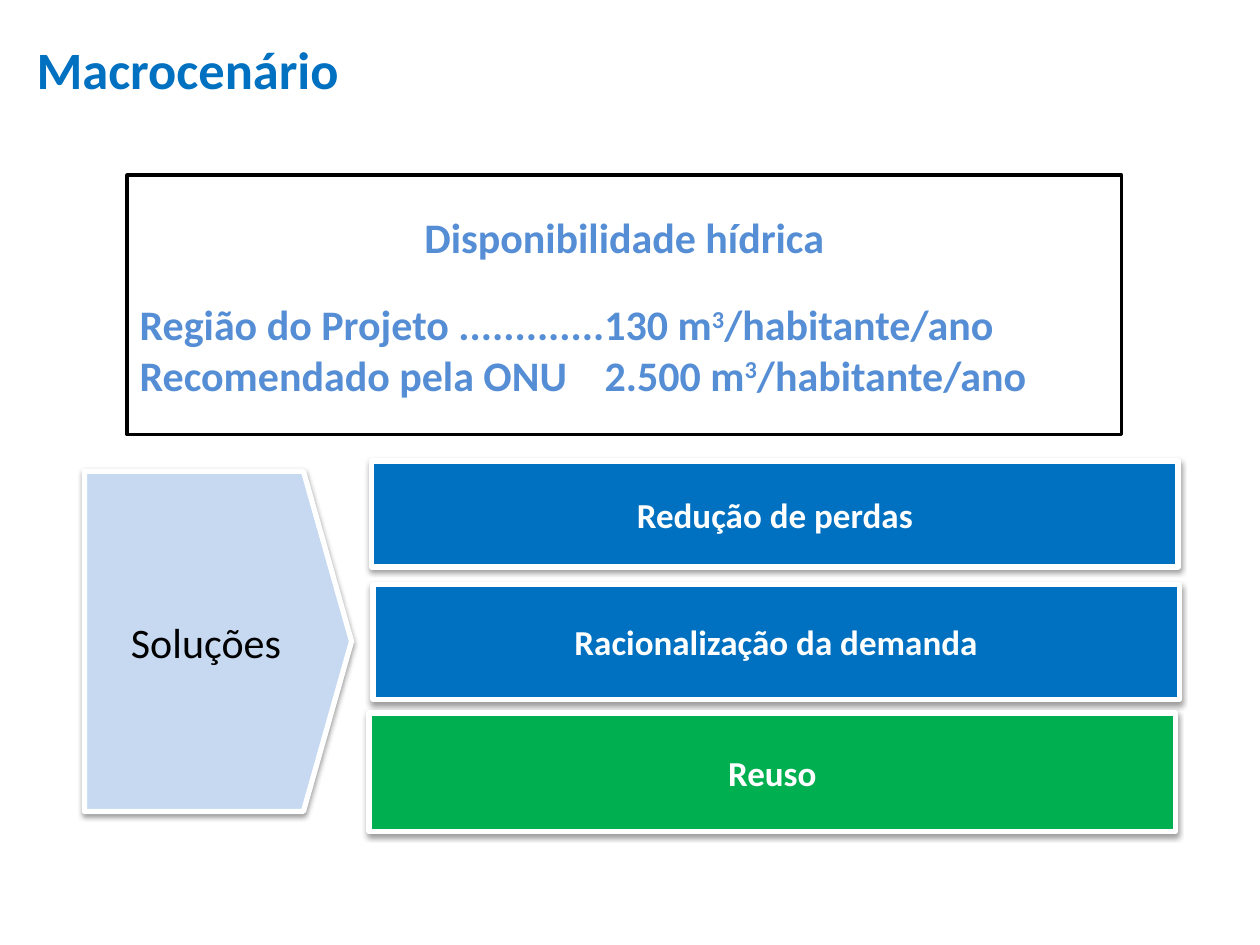
import pptx
import pptx.util
from lxml import etree
from pptx.dml.color import RGBColor
from pptx.enum.shapes import MSO_SHAPE
from pptx.enum.text import MSO_ANCHOR, PP_ALIGN
from pptx.oxml.ns import qn
from pptx.util import Inches, Pt

BLUE = RGBColor(0x00, 0x70, 0xC0)
SOFT_BLUE = RGBColor(0x55, 0x8E, 0xD5)
PALE_BLUE = RGBColor(0xC6, 0xD9, 0xF1)
GREEN = RGBColor(0x00, 0xB0, 0x50)
WHITE = RGBColor(0xFF, 0xFF, 0xFF)
BLACK = RGBColor(0x00, 0x00, 0x00)

# Content
TITLE = "Macrocenário"
WATER_HEADING = "Disponibilidade hídrica"
WATER_ROWS = ["Região do Projeto .............130 m", "Recomendado pela ONU\t2.500 m"]
EXPONENT, UNIT = "3", "/habitante/ano"
SOLUTIONS_LABEL = "Soluções"
SOLUTIONS = [  # text, fill, left, top, height
    ("Redução de perdas", BLUE, 2.95, 3.66, 0.84),
    ("Racionalização da demanda", BLUE, 2.96, 4.64, 0.91),
    ("Reuso", GREEN, 2.93, 5.66, 0.94),
]
SOLUTION_WIDTH = 6.4
VALUE_TAB = 3.69


def style(para, size, color, bold=True, align=PP_ALIGN.LEFT):
    para.alignment = align
    para.font.name = "Calibri"
    para.font.size = Pt(size)
    para.font.bold = bold
    para.font.color.rgb = color


def add_box(page, kind, area, fill, line, width):
    box = page.shapes.add_shape(kind, *map(Inches, area))
    box.fill.solid()
    box.fill.fore_color.rgb = fill
    box.line.color.rgb = line
    box.line.width = Pt(width)
    box.shadow.inherit = False
    box.text_frame.word_wrap = True
    return box


def add_shadow(box):
    effects = box._element.spPr.find(qn("a:effectLst"))
    shadow = etree.SubElement(effects, qn("a:outerShdw"), blurRad=str(Pt(3.1)),
                              dist=str(Pt(1.6)), dir="5400000", rotWithShape="0")
    color = etree.SubElement(shadow, qn("a:srgbClr"), val=str(BLACK))
    etree.SubElement(color, qn("a:alpha"), val="38000")


def add_solution_box(page, kind, area, fill, text, size, color, bold):
    box = add_box(page, kind, area, fill, WHITE, 3)
    add_shadow(box)
    box.text_frame.vertical_anchor = MSO_ANCHOR.MIDDLE
    para = box.text_frame.paragraphs[0]
    para.text = text
    style(para, size, color, bold, PP_ALIGN.CENTER)
    return box


def add_water_box(page):
    box = add_box(page, MSO_SHAPE.RECTANGLE, (1.01, 1.39, 7.89, 2.06), WHITE, BLACK, 2)
    frame = box.text_frame
    frame.vertical_anchor = MSO_ANCHOR.TOP
    frame.margin_top = Inches(0.29)
    heading = frame.paragraphs[0]
    heading.text = WATER_HEADING
    style(heading, 24, SOFT_BLUE, align=PP_ALIGN.CENTER)
    heading.space_after = Pt(21)
    for row in WATER_ROWS:
        para = frame.add_paragraph()
        tabs = etree.SubElement(para._p.get_or_add_pPr(), qn("a:tabLst"))
        etree.SubElement(tabs, qn("a:tab"), pos=str(Inches(VALUE_TAB)), algn="l")
        style(para, 24, SOFT_BLUE)
        for text in (row, EXPONENT, UNIT):
            span = para.add_run()
            span.text = text
            if text == EXPONENT:
                span._r.get_or_add_rPr().set("baseline", "30000")


def main():
    deck = pptx.Presentation()
    deck.slide_width, deck.slide_height = Inches(10), Inches(7.5)
    page = deck.slides.add_slide(deck.slide_layouts[5])

    # Title
    title = page.shapes.title
    title.left, title.top, title.width, title.height = map(Inches, (0.19, 0.24, 6.54, 1.41))
    title.text_frame.text = TITLE
    title.text_frame.vertical_anchor = MSO_ANCHOR.TOP
    style(title.text_frame.paragraphs[0], 30, BLUE)

    # Water availability
    add_water_box(page)

    # Solutions: arrow label and stacked bars
    arrow = add_solution_box(page, MSO_SHAPE.PENTAGON, (0.67, 3.74, 2.12, 2.7),
                             PALE_BLUE, SOLUTIONS_LABEL, 24, BLACK, False)
    arrow.adjustments[0] = 0.18
    for text, fill, left, top, height in SOLUTIONS:
        add_solution_box(page, MSO_SHAPE.RECTANGLE, (left, top, SOLUTION_WIDTH, height),
                         fill, text, 20, WHITE, True)

    deck.save("out.pptx")


if __name__ == "__main__":
    main()
